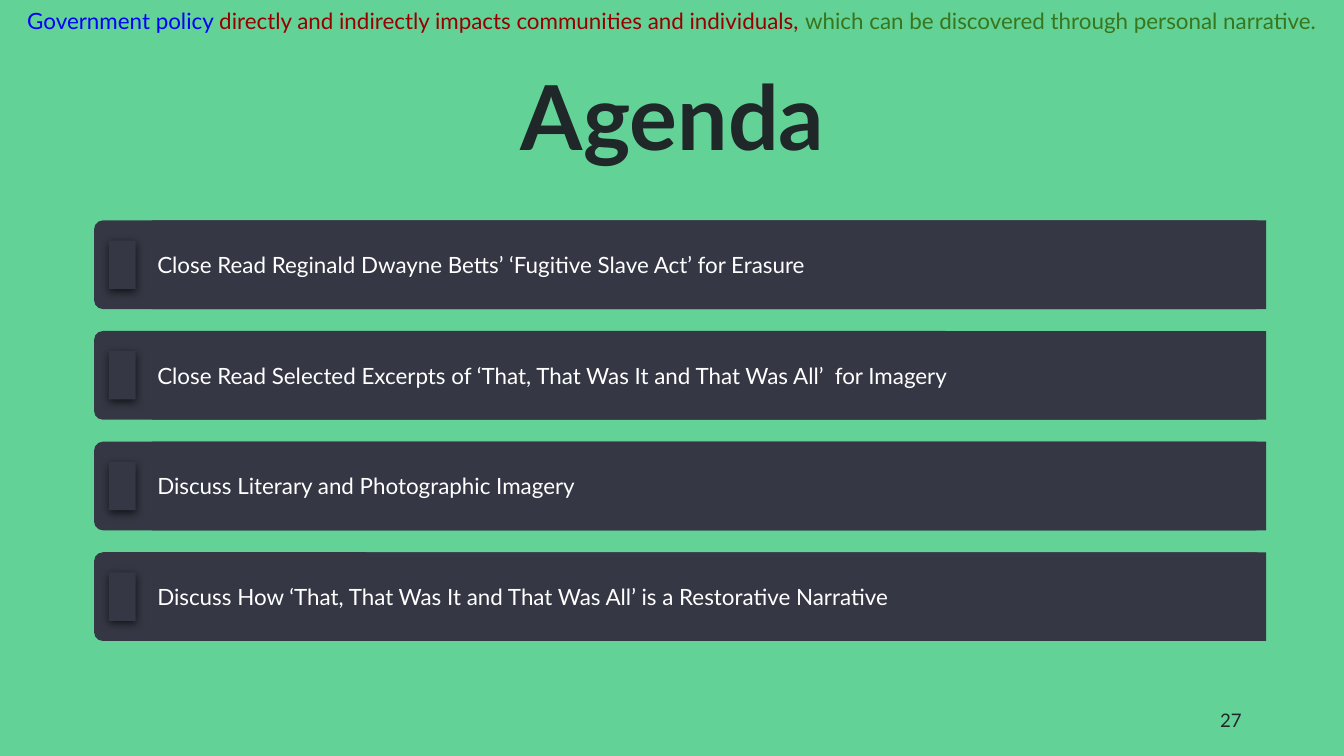
from lxml import etree
from pptx import Presentation
from pptx.dml.color import RGBColor
from pptx.enum import shapes, text
from pptx.oxml import ns
from pptx.util import Inches, Pt

GREEN = RGBColor(0x63, 0xD2, 0x97)
SLATE = RGBColor(0x35, 0x37, 0x44)
INK = RGBColor(0x20, 0x27, 0x29)
WHITE = RGBColor(0xFF, 0xFF, 0xFF)
BLUE = RGBColor(0x00, 0x00, 0xFF)
RED = RGBColor(0x98, 0x00, 0x00)
OLIVE = RGBColor(0x38, 0x76, 0x1D)

SHADOW = (
    f'<a:effectLst {ns.nsdecls("a")}>'
    '<a:outerShdw blurRad="57150" dist="19050" dir="5400000" algn="bl" rotWithShape="0">'
    '<a:srgbClr val="000000"><a:alpha val="63000"/></a:srgbClr>'
    '</a:outerShdw></a:effectLst>'
)


def add_block(parent, kind, left, top, width, height, color):
    """Add a flat shape without outline or shadow."""
    block = parent.add_shape(kind, Inches(left), Inches(top), Inches(width), Inches(height))
    block.shadow.inherit = False
    block.fill.solid()
    block.fill.fore_color.rgb = color
    block.line.fill.background()
    return block


def write(shape, runs, size, align, anchor, inset_x, inset_y, bold=False, spacing=1.0):
    """Fill a shape with one paragraph made of (wording, colour) runs."""
    frame = shape.text_frame
    frame.word_wrap = True
    frame.auto_size = text.MSO_AUTO_SIZE.NONE
    frame.vertical_anchor = anchor
    frame.margin_left = frame.margin_right = Inches(inset_x)
    frame.margin_top = frame.margin_bottom = Inches(inset_y)
    paragraph = frame.paragraphs[0]
    paragraph.alignment = align
    paragraph.line_spacing = spacing
    for wording, color in runs:
        run = paragraph.add_run()
        run.text = wording
        run.font.name = "Lato"
        run.font.size = Pt(size)
        run.font.bold = bold
        run.font.color.rgb = color


RECT = shapes.MSO_SHAPE.RECTANGLE
ALIGN = text.PP_ALIGN
ANCHOR = text.MSO_ANCHOR
SLIDE_WIDTH = 10
SLIDE_HEIGHT = SLIDE_WIDTH * 9 / 16

prs = Presentation()
prs.slide_width = Inches(SLIDE_WIDTH)
prs.slide_height = Inches(SLIDE_HEIGHT)
slide = prs.slides.add_slide(prs.slide_layouts[5])

# Title over a full-slide green backdrop
title = slide.shapes.title
backdrop = add_block(slide.shapes, RECT, 0, 0, SLIDE_WIDTH, SLIDE_HEIGHT, GREEN)
title.element.addprevious(backdrop.element)
title.left, title.top = Inches(1.77), Inches(0.49)
title.width, title.height = Inches(6.47), Inches(0.82)
write(title, [("Agenda", INK)], 48, ALIGN.CENTER, ANCHOR.MIDDLE, 0.07, 0.04,
      bold=True, spacing=0.9)

# Agenda bars, evenly spread between the first and the last
agenda = [
    "Close Read Reginald Dwayne Betts’ ‘Fugitive Slave Act’ for Erasure",
    "Close Read Selected Excerpts of ‘That, That Was It and That Was All’  for Imagery",
    "Discuss Literary and Photographic Imagery",
    "Discuss How ‘That, That Was It and That Was All’ is a Restorative Narrative",
]
FIRST_TOP, LAST_TOP, BAR_HEIGHT = 1.64, 4.11, 0.66
pitch = (LAST_TOP - FIRST_TOP) / (len(agenda) - 1)
bars = slide.shapes.add_group_shape().shapes
for row, item in enumerate(agenda):
    top = FIRST_TOP + row * pitch
    bar = add_block(bars, shapes.MSO_SHAPE.ROUNDED_RECTANGLE, 0.7, top, 8.71, BAR_HEIGHT, SLATE)
    bar.adjustments[0] = 0.1

    marker = add_block(bars, RECT, 0.81, top + 0.15, 0.2, 0.36, SLATE)
    properties = marker.element.spPr
    properties.replace(properties.find(ns.qn("a:effectLst")), etree.fromstring(SHADOW))

    label = add_block(bars, RECT, 1.13, top, 8.29, BAR_HEIGHT, SLATE)
    write(label, [(item, WHITE)], 12, ALIGN.LEFT, ANCHOR.MIDDLE, 0.04, 0.04)

# Theme statement along the top edge
theme = slide.shapes.add_textbox(Inches(0), Inches(-0.03), Inches(SLIDE_WIDTH), Inches(0.32))
theme_runs = [
    ("Government policy ", BLUE),
    ("directly and indirectly impacts communities and individuals, ", RED),
    ("which can be discovered through personal narrative.", OLIVE),
]
write(theme, theme_runs, 12, ALIGN.CENTER, ANCHOR.TOP, 0.1, 0.1, spacing=0.95)

page_number = slide.shapes.add_textbox(Inches(7.06), Inches(5.21), Inches(2.25), Inches(0.3))
write(page_number, [("27", INK)], 10, ALIGN.RIGHT, ANCHOR.MIDDLE, 0.07, 0.04)

prs.save("out.pptx")
